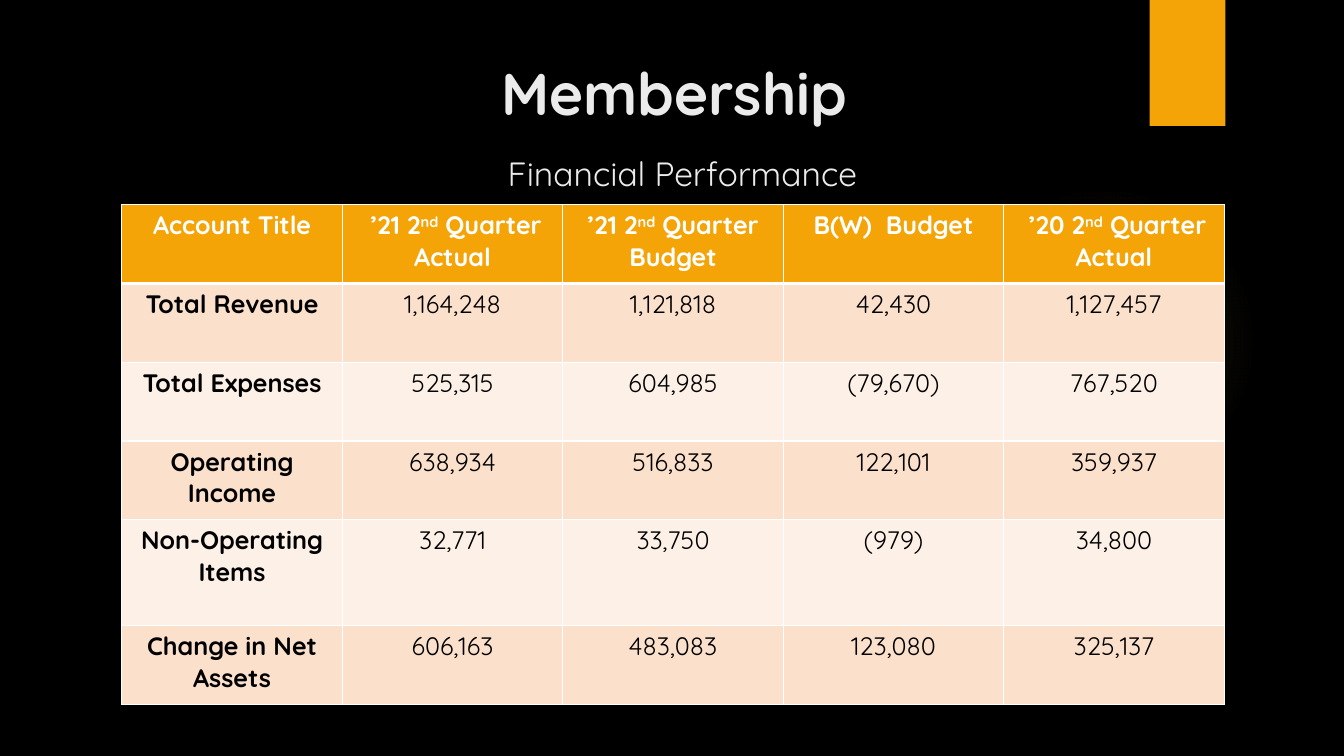
from dataclasses import dataclass
from lxml.etree import SubElement as Sub
from pptx import Presentation
from pptx.dml.color import RGBColor as Rgb
from pptx.enum.shapes import MSO_SHAPE as Shape
from pptx.enum.text import MSO_ANCHOR as Anchor, MSO_AUTO_SIZE as Fit, PP_ALIGN as Align
from pptx.oxml.ns import qn
from pptx.util import Pt


@dataclass(frozen=True)
class Theme:
    face: str = "Quicksand"
    back: str = "000000"
    ink: str = "000000"
    white: str = "FFFFFF"
    pale: str = "EBEBEB"
    gold: str = "F5A408"
    glow: str = "FAC96A"
    bands: tuple = ("FBE0CC", "FDF0E7")
    big: int = 42
    mid: int = 24
    small: int = 18


HEAD = [
    "Account Title",
    " ’21 2^nd^ Quarter\nActual",
    "’21 2^nd^ Quarter\nBudget",
    "B(W)  Budget",
    " ’20 2^nd^ Quarter\nActual",
]
ROWS = [
    ["Total Revenue", "1,164,248", "1,121,818", "42,430", "1,127,457"],
    ["Total Expenses", "525,315", "604,985", "(79,670)", "767,520"],
    ["Operating Income", "638,934", "516,833", "122,101", "359,937"],
    ["Non-Operating Items", "32,771", "33,750", "(979)", "34,800"],
    ["Change in Net Assets", "606,163", "483,083", "123,080", "325,137"],
]
HIGHS = [75, 75, 75, 75, 101, 75]


def px(n):
    return n * 9525


class Deck:
    """Draws styled elements on the current slide."""

    def __init__(self, theme):
        self.theme = theme
        self.file = Presentation()
        self.file.slide_width, self.file.slide_height = px(1280), px(720)
        self.slide = self.file.slides.add_slide(self.file.slide_layouts[5])
        fill = self.slide.background.fill
        fill.solid()
        fill.fore_color.rgb = Rgb.from_string(theme.back)

    def style(self, para, size, color, bold):
        para.alignment = Align.CENTER
        font = para.font
        font.name, font.size, font.bold = self.theme.face, Pt(size), bold
        font.color.rgb = Rgb.from_string(color)

    def shape(self, kind, box, color):
        item = self.slide.shapes.add_shape(kind, *map(px, box))
        item.shadow.inherit = False
        item.line.fill.background()
        item.fill.solid()
        item.fill.fore_color.rgb = Rgb.from_string(color)
        return item

    def glow(self, box, stops):
        item = self.shape(Shape.OVAL, box, self.theme.glow)
        flat = item.fill.fore_color and item.element.spPr.find(qn("a:solidFill"))
        grad = flat.makeelement(qn("a:gradFill"), {"rotWithShape": "1"})
        flat.getparent().replace(flat, grad)
        stop_list = Sub(grad, qn("a:gsLst"))
        for pos, alpha in stops:
            stop = Sub(stop_list, qn("a:gs"), pos=str(pos * 1000))
            tint = Sub(stop, qn("a:srgbClr"), val=self.theme.glow)
            Sub(tint, qn("a:alpha"), val=str(alpha * 1000))
        way = Sub(grad, qn("a:path"), path="circle")
        Sub(way, qn("a:fillToRect"), dict.fromkeys("ltrb", "50000"))

    def title(self, box, name, note):
        item = self.slide.shapes.title
        item.left, item.top, item.width, item.height = map(px, box)
        frame = item.text_frame
        frame.auto_size, frame.vertical_anchor = Fit.NONE, Anchor.MIDDLE
        para = frame.paragraphs[0]
        para.text = name + "\v "
        self.style(para, self.theme.big, self.theme.pale, True)
        run = para.add_run()
        run.text = note
        run.font.size, run.font.bold = Pt(self.theme.mid), False

    def edge(self, cell, row):
        props = cell._tc.get_or_add_tcPr()
        thick = {0: "lnB", 1: "lnT"}.get(row)
        for side in ("lnL", "lnR", "lnT", "lnB"):
            width = Pt(3 if side == thick else 1)
            line = Sub(props, qn("a:" + side), w=str(width))
            Sub(Sub(line, qn("a:solidFill")), qn("a:srgbClr"), val=self.theme.white)

    def cell(self, cell, text, row, col):
        theme = self.theme
        self.edge(cell, row)
        cell.fill.solid()
        fill = theme.bands[(row - 1) % 2] if row else theme.gold
        cell.fill.fore_color.rgb = Rgb.from_string(fill)
        frame = cell.text_frame
        for i, line in enumerate(text.split("\n")):
            para = frame.add_paragraph() if i else frame.paragraphs[0]
            self.style(para, theme.small, theme.ink if row else theme.white, not (row and col))
            for j, part in enumerate(line.split("^")):
                run = para.add_run()
                run.text = part
                if j % 2:
                    run._r.get_or_add_rPr().set("baseline", "30000")

    def table(self, left, top, wide, highs, rows):
        count = len(rows[0])
        box = (left, top, wide * count, sum(highs))
        grid = self.slide.shapes.add_table(len(rows), count, *map(px, box)).table
        for col in grid.columns:
            col.width = px(wide)
        for r, (high, row) in enumerate(zip(highs, rows)):
            grid.rows[r].height = px(high)
            for c, text in enumerate(row):
                self.cell(grid.cell(r, c), text, r, c)


def main():
    deck = Deck(Theme())
    deck.glow((903, 176, 296, 296), [(0, 7), (36, 6), (69, 0)])
    deck.shape(Shape.RECTANGLE, (1095, 0, 72, 120), deck.theme.gold)
    deck.title((148, 48, 988, 147), "Membership", "Financial Performance")
    deck.table(116, 195, 210, HIGHS, [HEAD, *ROWS])
    deck.file.save("out.pptx")


if __name__ == "__main__":
    main()
